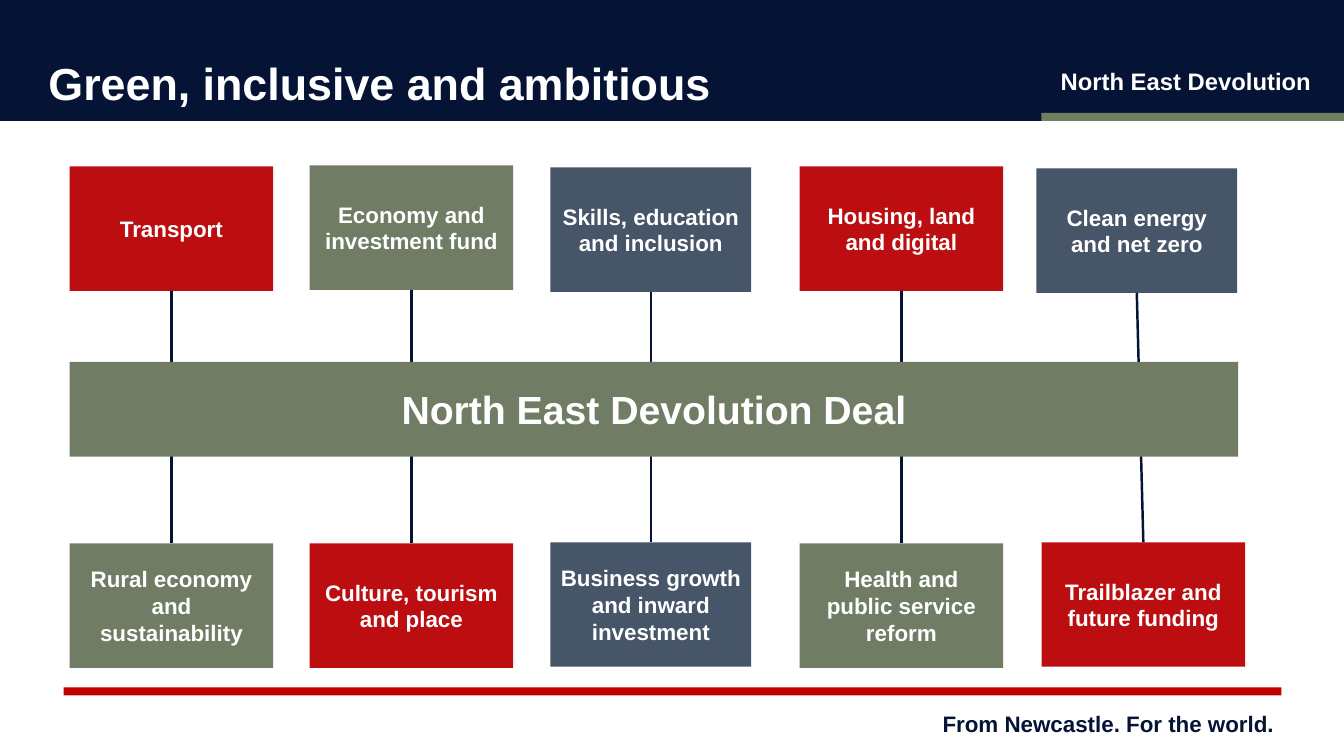
from pptx import Presentation
from pptx.util import Inches, Pt
from pptx.dml.color import RGBColor
from pptx.enum import shapes, text
from pptx.oxml.ns import qn
from lxml import etree

NAVY, RED, SAGE, SLATE = "051435", "BC0D11", "707C63", "465568"
WHITE = "FFFFFF"
HIGH = 1.235

# Each column: two themes as (label, colour, left, top, width)
THEMES = [
    (("Transport", RED, 0.69, 1.65, 2.02),
     ("Rural economy and sustainability", SAGE, 0.69, 5.39, 2.02)),
    (("Economy and investment fund", SAGE, 3.07, 1.64, 2.02),
     ("Culture, tourism and place", RED, 3.07, 5.39, 2.02)),
    (("Skills, education and inclusion", SLATE, 5.46, 1.66, 1.99),
     ("Business growth and inward investment", SLATE, 5.46, 5.38, 1.99)),
    (("Housing, land and digital", RED, 7.93, 1.65, 2.02),
     ("Health and public service reform", SAGE, 7.93, 5.39, 2.02)),
    (("Clean energy and net zero", SLATE, 10.28, 1.67, 1.99),
     ("Trailblazer and future funding", RED, 10.33, 5.38, 2.02)),
]
DEAL = ("North East Devolution Deal", SAGE, 0.69, 3.59, 11.59)

# Plain bands: (colour, left, top, width, height)
BANDS = [
    ("C00000", 0.63, 6.82, 12.08, 0.08),
    (NAVY, 0, -0.02, 13.33, 1.22),
    ("6E7E61", 10.33, 1.12, 3, 0.08),
]

# Captions: (words, size, colour, anchor, line spacing, box)
CAPTIONS = [
    ("From Newcastle. For the world.", 16, NAVY, text.MSO_ANCHOR.TOP, 1,
     (9.25, 7, 3.57, 0.37)),
    ("North East Devolution", 17, WHITE, text.MSO_ANCHOR.BOTTOM, 0.9,
     (10.42, 0.14, 3.41, 0.86)),
]
TITLE = ("Green, inclusive and ambitious", 32, WHITE,
         text.MSO_ANCHOR.MIDDLE, 0.9)

deck = Presentation()
deck.slide_width, deck.slide_height = Inches(13.33), Inches(7.5)
slide = deck.slides.add_slide(deck.slide_layouts[5])
parts = slide.shapes


def paint(hue):
    return RGBColor.from_string(hue)


def write(shape, words, size, hue, anchor, pitch=1, align=text.PP_ALIGN.LEFT):
    frame = shape.text_frame
    frame.word_wrap = True
    frame.auto_size = text.MSO_AUTO_SIZE.NONE
    frame.vertical_anchor = anchor
    para = frame.paragraphs[0]
    para.alignment = align
    para.line_spacing = pitch
    run = para.add_run()
    run.text = words
    font = run.font
    font.name, font.size, font.bold = "Arial", Pt(size), True
    font.color.rgb = paint(hue)


def block(hue, *box):
    shape = parts.add_shape(shapes.MSO_SHAPE.RECTANGLE, *map(Inches, box))
    shape.shadow.inherit = False
    shape.fill.solid()
    shape.fill.fore_color.rgb = paint(hue)
    shape.line.fill.background()
    return shape


def panel(words, hue, left, top, width, high=HIGH, size=16):
    shape = block(hue, left, top, width, high)
    write(shape, words, size, WHITE, text.MSO_ANCHOR.MIDDLE,
          align=text.PP_ALIGN.CENTER)
    return shape


# Header, footer and captions
for band in BANDS:
    block(*band)
for *style, box in CAPTIONS:
    write(parts.add_textbox(*map(Inches, box)), *style)

# Title, raised above the header band
title = parts.title
title.left, title.top = Inches(0.38), Inches(0.38)
title.width, title.height = Inches(11.42), Inches(0.95)
write(title, *TITLE)
parts._spTree.append(title._element)

# Theme boxes, each pair joined by a line
for pair in THEMES:
    upper, lower = [panel(*theme) for theme in pair]
    link = parts.add_connector(shapes.MSO_CONNECTOR.STRAIGHT, 0, 0, 0, 0)
    link.begin_connect(upper, 2)
    link.end_connect(lower, 0)
    link.line.color.rgb = paint(NAVY)
    link.line.width = Pt(1.75)
    etree.SubElement(link._element.spPr, qn("a:effectLst"))

# Central bar, over the lines
panel(*DEAL, high=0.94, size=28)

deck.save("out.pptx")
